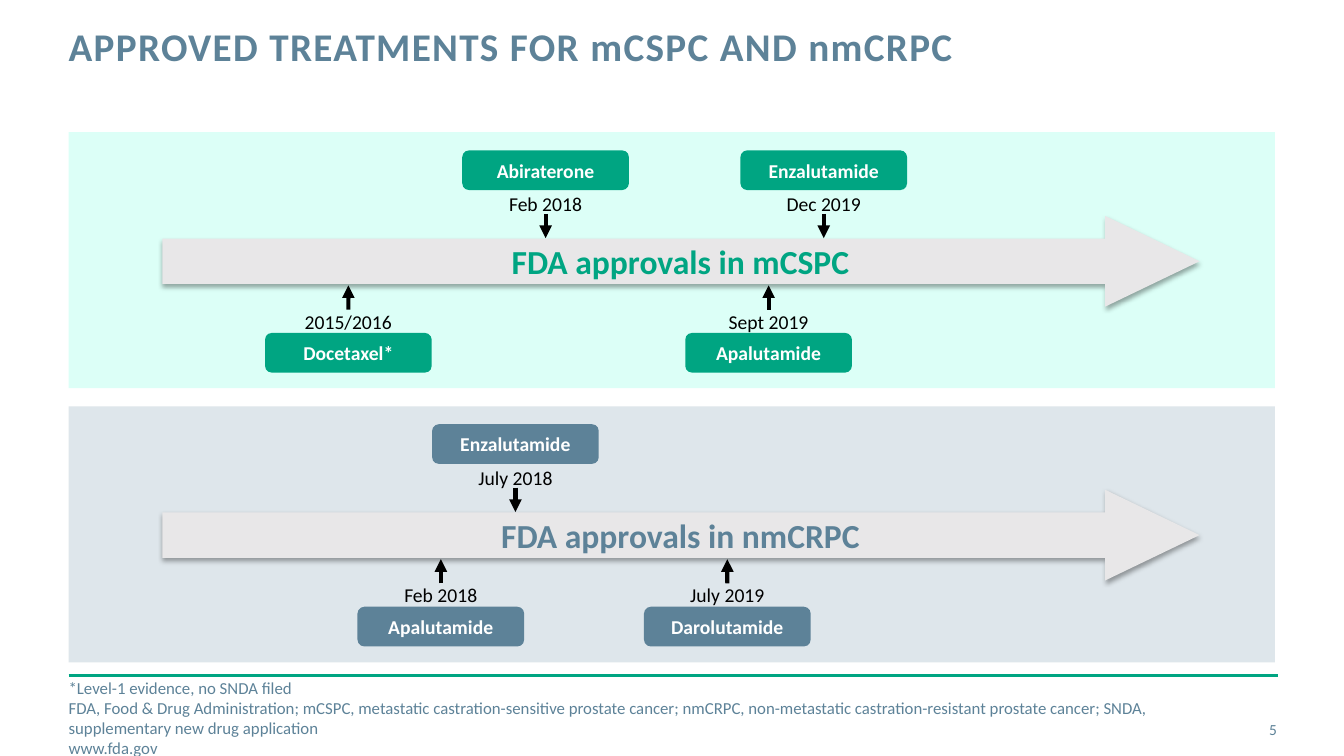
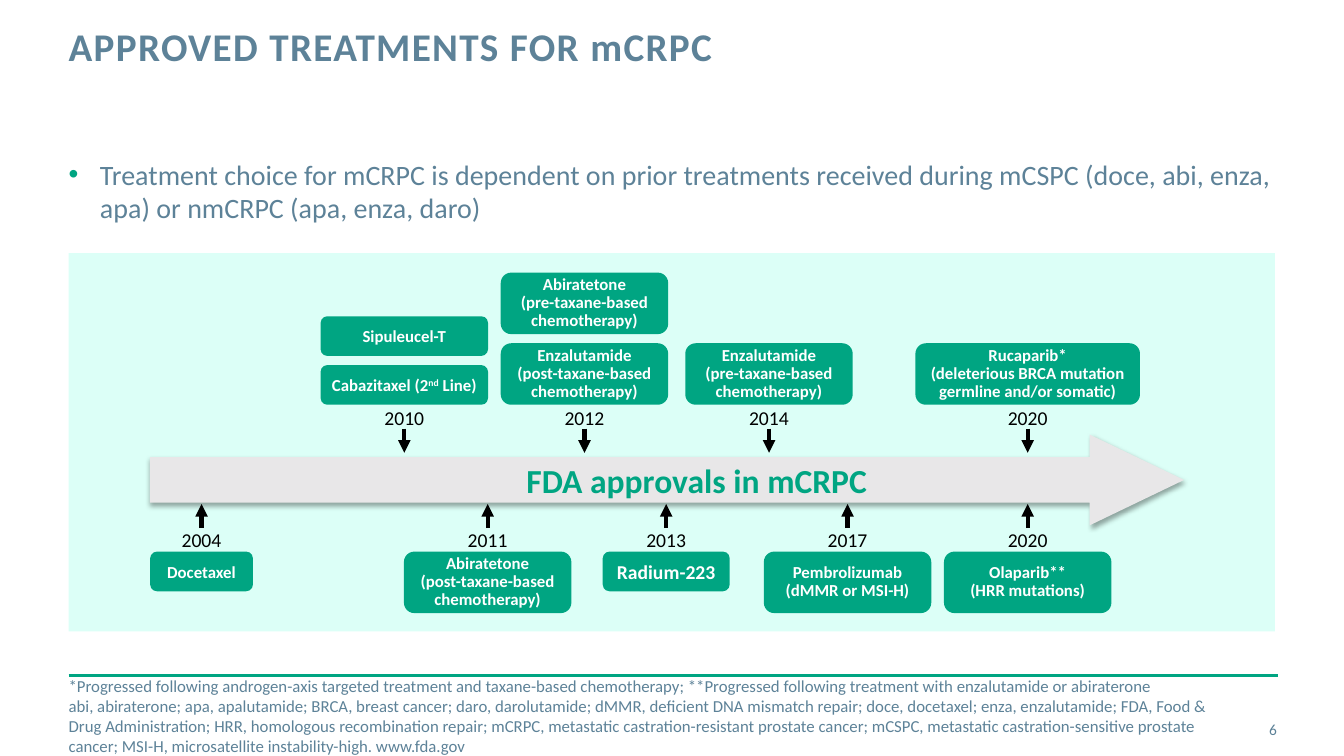
from lxml import etree
from pptx import Presentation
from pptx.dml.color import RGBColor
from pptx.enum.shapes import MSO_CONNECTOR, MSO_SHAPE
from pptx.enum.text import MSO_ANCHOR, MSO_AUTO_SIZE, PP_ALIGN
from pptx.oxml.ns import qn
from pptx.util import Cm, Pt

# Shared style
FONT = "Calibri"
GREEN = RGBColor(0x00, 0xA5, 0x82)
SLATE = RGBColor(0x5D, 0x82, 0x98)
MINT = RGBColor(0xBA, 0xFF, 0xF0)
PALE = RGBColor(0xDE, 0xE6, 0xEB)
GREY = RGBColor(0xE8, 0xE7, 0xE8)
BLACK = RGBColor(0x00, 0x00, 0x00)
WHITE = RGBColor(0xFF, 0xFF, 0xFF)
LEFT = 1.73
BAND_W = 30.4
ARROW_H = 2.29
DATE_W, DATE_H = 2.4, 0.56
POINTER = 0.61
STACK_GAP = 0.23

# Event: centre, date, above the arrow, box width, text size, boxes from the arrow outwards
MCSPC = [
    (13.75, "Feb 2018", True, 4.2, 14, ["Abiraterone"]),
    (20.76, "Dec 2019", True, 4.2, 14, ["Enzalutamide"]),
    (8.78, "2015/2016", False, 4.2, 14, ["Docetaxel*"]),
    (19.37, "Sept 2019", False, 4.2, 14, ["Apalutamide"]),
]
NMCRPC = [
    (12.99, "July 2018", True, 4.2, 14, ["Enzalutamide"]),
    (11.11, "Feb 2018", False, 4.2, 14, ["Apalutamide"]),
    (18.33, "July 2019", False, 4.2, 14, ["Darolutamide"]),
]
MCRPC = [
    (10.19, "2010", True, 4.22, 12, ["Cabazitaxel (2^nd^ Line)", "Sipuleucel-T"]),
    (14.73, "2012", True, 4.22, 12, ["Enzalutamide\n(post-taxane-based\nchemotherapy)",
                                     "Abiratetone\n(pre-taxane-based\nchemotherapy)"]),
    (19.38, "2014", True, 4.22, 12, ["Enzalutamide\n(pre-taxane-based\nchemotherapy)"]),
    (25.9, "2020", True, 5.66, 12,
     ["Rucaparib*\n(deleterious BRCA mutation\ngermline and/or somatic)"]),
    (5.08, "2004", False, 2.59, 12, ["Docetaxel"]),
    (12.29, "2011", False, 4.22, 12, ["Abiratetone\n(post-taxane-based\nchemotherapy)"]),
    (16.79, "2013", False, 3.2, 14, ["Radium-223"]),
    (21.36, "2017", False, 4.22, 12, ["Pembrolizumab\n(dMMR or MSI-H)"]),
    (25.9, "2020", False, 4.22, 12, ["Olaparib**\n(HRR mutations)"]),
]

# Band: top, height, fill, accent, arrow (left, top, width), heading, heading centre, date rise, events
# Slide: title, number, bullet, footnote (top, width, lines), bands
SLIDES = [
    ("APPROVED TREATMENTS FOR mCSPC AND nmCRPC", 5, None,
     (17.58, 29.11, [
         "*Level-1 evidence, no SNDA filed",
         "FDA, Food & Drug Administration; mCSPC, metastatic castration-sensitive prostate cancer; "
         "nmCRPC, non-metastatic castration-resistant prostate cancer; SNDA, supplementary new drug "
         "application",
         "www.fda.gov"]),
     [(10.24, 6.45, PALE, SLATE, (4.09, 12.34, 26.14), "FDA approvals in nmCRPC", 17.15, 0.61, NMCRPC),
      (3.33, 6.45, MINT, GREEN, (4.09, 5.44, 26.14), "FDA approvals in mCSPC", 17.15, 0.61, MCSPC)]),
    ("APPROVED TREATMENTS FOR mCRPC", 6,
     "Treatment choice for mCRPC is dependent on prior treatments received during mCSPC "
     "(doce, abi, enza, apa) or nmCRPC (apa, enza, daro)",
     (17.53, 29.54, [
         "*Progressed following androgen-axis targeted treatment and taxane-based chemotherapy; "
         "**Progressed following treatment with enzalutamide or abiraterone",
         "abi, abiraterone; apa, apalutamide; BRCA, breast cancer; daro, darolutamide; dMMR, deficient "
         "DNA mismatch repair; doce, docetaxel; enza, enzalutamide; FDA, Food & Drug Administration; "
         "HRR, homologous recombination repair; mCRPC, metastatic castration-resistant prostate cancer; "
         "mCSPC, metastatic castration-sensitive prostate cancer; MSI-H, microsatellite "
         "instability-high. www.fda.gov"]),
     [(6.38, 9.53, MINT, GREEN, (3.78, 10.95, 26.06), "FDA approvals in mCRPC", 17.56, 0.71, MCRPC)]),
]


def set_text(sp, lines, size, colour, bold=False, align=PP_ALIGN.LEFT, anchor=MSO_ANCHOR.TOP):
    """Write one paragraph per line; text between ^ marks is superscript."""
    tf = sp.text_frame
    tf.word_wrap = True
    tf.auto_size = MSO_AUTO_SIZE.NONE
    tf.vertical_anchor = anchor
    tf.margin_left = tf.margin_right = tf.margin_top = tf.margin_bottom = 0
    for i, line in enumerate(lines):
        p = tf.add_paragraph() if i else tf.paragraphs[0]
        p.alignment = align
        first, *rest = line.split("^")
        p.text = first
        for k, part in enumerate(rest):
            r = p.add_run()
            r.text = part
            if k % 2 == 0:
                r._r.get_or_add_rPr().set("baseline", "30000")
        for r in p.runs:
            r.font.name = FONT
            r.font.size = Pt(size)
            r.font.bold = bold
            r.font.color.rgb = colour
    return tf.paragraphs[0]


def add_block(s, kind, x, y, w, h, fill):
    """Add a flat filled shape without outline or shadow."""
    sp = s.shapes.add_shape(kind, Cm(x), Cm(y), Cm(w), Cm(h))
    sp.fill.solid()
    sp.fill.fore_color.rgb = fill
    sp.line.fill.background()
    sp.shadow.inherit = False
    return sp


prs = Presentation()
prs.slide_width, prs.slide_height = Cm(33.87), Cm(19.05)

for title, number, bullet, (note_top, note_w, notes), bands in SLIDES:
    s = prs.slides.add_slide(prs.slide_layouts[5])

    # Title
    sp = s.shapes.title
    sp.left, sp.top, sp.width, sp.height = Cm(LEFT), Cm(0.69), Cm(24.28), Cm(2.24)
    p = set_text(sp, [title], 28, SLATE, bold=True)
    p.line_spacing = Pt(30)
    p.runs[0]._r.get_or_add_rPr().set("spc", "100")

    # Footer: rule, footnote and slide number
    rule = s.shapes.add_connector(MSO_CONNECTOR.STRAIGHT, Cm(LEFT), Cm(17.02), Cm(32.21), Cm(17.02))
    rule.line.color.rgb = GREEN
    rule.line.width = Pt(2)
    etree.SubElement(rule._element.spPr, qn("a:effectLst"))
    sp = s.shapes.add_textbox(Cm(LEFT), Cm(note_top), Cm(note_w), Cm(1.02))
    set_text(sp, notes, 12, SLATE, anchor=MSO_ANCHOR.MIDDLE)
    sp = s.shapes.add_textbox(Cm(30), Cm(17.86), Cm(2.18), Cm(1.02))
    set_text(sp, [str(number)], 11, SLATE, align=PP_ALIGN.RIGHT, anchor=MSO_ANCHOR.MIDDLE)

    # Bullet
    if bullet:
        sp = s.shapes.add_textbox(Cm(LEFT), Cm(3.96), Cm(30.45), Cm(2.1))
        p = set_text(sp, [bullet], 20, SLATE)
        pPr = p._p.get_or_add_pPr()
        pPr.set("marL", str(Cm(0.79)))
        pPr.set("indent", str(-Cm(0.79)))
        clr = etree.SubElement(pPr, qn("a:buClr"))
        etree.SubElement(clr, qn("a:srgbClr"), val=str(GREEN))
        etree.SubElement(pPr, qn("a:buFont"), typeface="Arial")
        etree.SubElement(pPr, qn("a:buChar"), char="•")

    for top, height, fill, accent, (ax, ay, aw), heading, centre, rise, events in bands:
        # Band, half transparent when mint
        sp = add_block(s, MSO_SHAPE.RECTANGLE, LEFT, top, BAND_W, height, fill)
        if fill == MINT:
            clr = next(sp._element.spPr.iter(qn("a:srgbClr")))
            etree.SubElement(clr, qn("a:alpha"), val="50000")

        # Time arrow with soft shadow, and its heading
        sp = add_block(s, MSO_SHAPE.RIGHT_ARROW, ax, ay, aw, ARROW_H, GREY)
        sp.adjustments[0], sp.adjustments[1] = 0.5, 1.04
        shadow = etree.SubElement(sp._element.spPr.find(qn("a:effectLst")), qn("a:outerShdw"),
                                  blurRad=str(Pt(3.1)), dist=str(Pt(1.8)), dir="5400000",
                                  rotWithShape="0")
        clr = etree.SubElement(shadow, qn("a:srgbClr"), val=str(BLACK))
        etree.SubElement(clr, qn("a:alpha"), val="35000")
        sp = s.shapes.add_textbox(Cm(centre - 6), Cm(ay + 0.64), Cm(12), Cm(1.02))
        set_text(sp, [heading], 24, accent, bold=True, align=PP_ALIGN.CENTER)

        for x, date, above, box_w, size, boxes in events:
            # Date
            date_y = ay - rise if above else ay + 2.36
            sp = s.shapes.add_textbox(Cm(x - DATE_W / 2), Cm(date_y), Cm(DATE_W), Cm(DATE_H))
            set_text(sp, [date], 14, BLACK, align=PP_ALIGN.CENTER)

            # Pointer from the date to the arrow
            start = date_y + DATE_H if above else date_y
            end = start + POINTER if above else start - POINTER
            line = s.shapes.add_connector(MSO_CONNECTOR.STRAIGHT, Cm(x), Cm(start), Cm(x), Cm(end))
            line.begin_connect(sp, 2 if above else 0)
            line.line.color.rgb = BLACK
            line.line.width = Pt(3)
            etree.SubElement(line.line._get_or_add_ln(), qn("a:tailEnd"), type="triangle")
            etree.SubElement(line._element.spPr, qn("a:effectLst"))

            # Treatment boxes, stacked away from the arrow
            edge = date_y - 0.04 if above else date_y + 0.59
            for text in boxes:
                box_h = 1.55 if "\n" in text else 1.0
                box_y = edge - box_h if above else edge
                sp = add_block(s, MSO_SHAPE.ROUNDED_RECTANGLE, x - box_w / 2, box_y, box_w, box_h, accent)
                sp.adjustments[0] = 0.17
                p = set_text(sp, [text], size, WHITE, bold=True, align=PP_ALIGN.CENTER,
                             anchor=MSO_ANCHOR.MIDDLE)
                if "\n" in text:
                    p.line_spacing = 0.9
                edge = box_y - STACK_GAP if above else box_y + box_h + STACK_GAP

prs.save("out.pptx")
